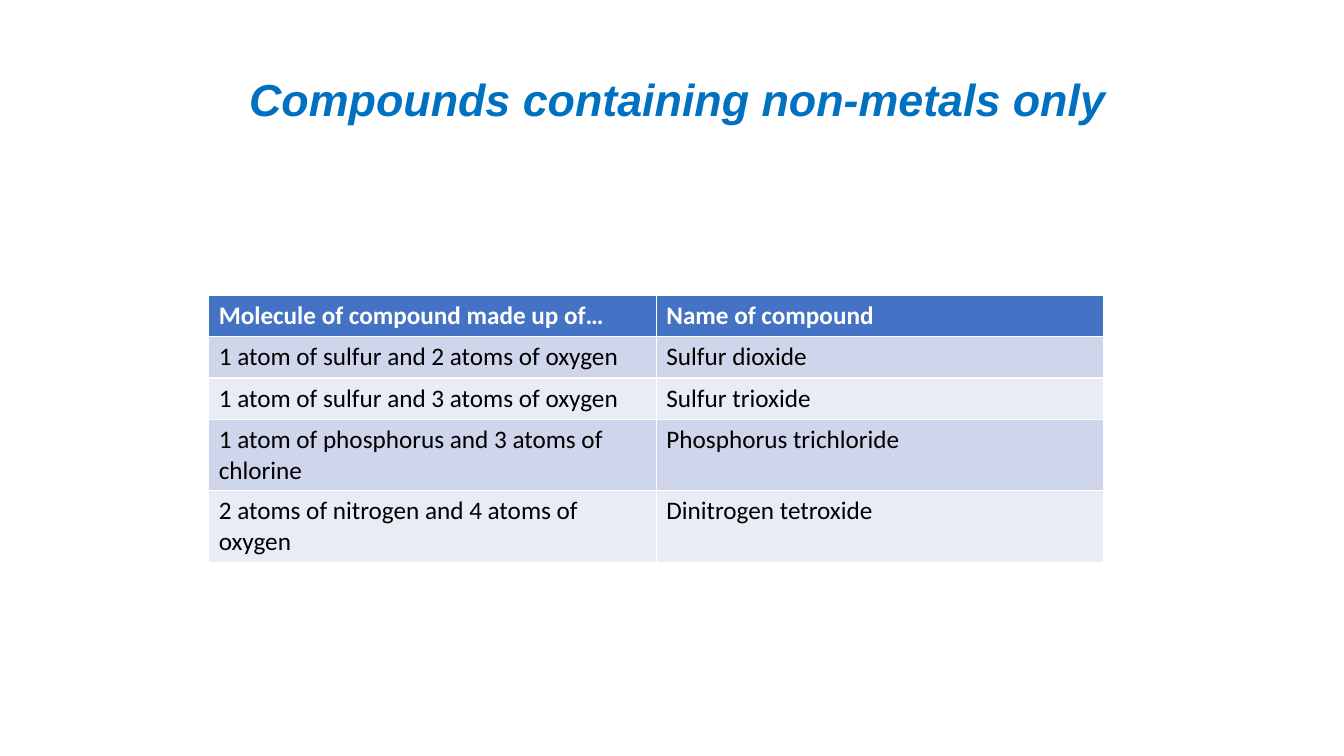
from pptx import Presentation
from pptx.dml.color import RGBColor
from pptx.enum.text import MSO_ANCHOR, PP_ALIGN
from pptx.util import Inches, Pt

MIDDLE = MSO_ANCHOR.MIDDLE
CENTER = PP_ALIGN.CENTER

TITLE = "Compounds containing non-metals only "
COMPOUNDS = [
    ("Molecule of compound made up of…", "Name of compound"),
    ("1 atom of sulfur and 2 atoms of oxygen", "Sulfur dioxide"),
    ("1 atom of sulfur and 3 atoms of oxygen", "Sulfur trioxide"),
    ("1 atom of phosphorus and 3 atoms of chlorine", "Phosphorus trichloride"),
    ("2 atoms of nitrogen and 4 atoms of oxygen", "Dinitrogen tetroxide"),
]

SLIDE_WIDTH, SLIDE_HEIGHT = 13.33, 7.5
LEFT = 2.07
TITLE_TOP, TITLE_WIDTH, TITLE_HEIGHT = 0.23, 9.43, 1.56
TABLE_TOP, COLUMN_WIDTH, ROW_HEIGHT = 2.93, 4.44, 0.41

HEADER_FILL = "4472C4"
BAND_FILLS = ("CFD5EA", "E9EBF5")
TITLE_FORMAT = {"name": "Arial", "size": Pt(32), "bold": True, "italic": True}
HEADER_FORMAT = {"name": "Calibri", "size": Pt(18), "bold": True}
BODY_FORMAT = {"name": "Calibri", "size": Pt(18), "bold": False}


def set_color(color_format, value):
    color_format.rgb = RGBColor.from_string(value)


def write_text(text_frame, text, font_format, color):
    text_frame.text = text
    font = text_frame.paragraphs[0].runs[0].font
    for name, value in font_format.items():
        setattr(font, name, value)
    set_color(font.color, color)


def add_title(slide):
    title = slide.shapes.title
    title.left, title.top = Inches(LEFT), Inches(TITLE_TOP)
    title.width, title.height = Inches(TITLE_WIDTH), Inches(TITLE_HEIGHT)
    text_frame = title.text_frame
    text_frame.word_wrap = True
    text_frame.vertical_anchor = MIDDLE
    write_text(text_frame, TITLE, TITLE_FORMAT, "0070C0")
    paragraph = text_frame.paragraphs[0]
    paragraph.alignment = CENTER
    paragraph.line_spacing = 0.9


def add_compound_table(slide):
    row_count, column_count = len(COMPOUNDS), len(COMPOUNDS[0])
    table = slide.shapes.add_table(
        row_count, column_count, Inches(LEFT), Inches(TABLE_TOP),
        Inches(column_count * COLUMN_WIDTH), Inches(row_count * ROW_HEIGHT),
    ).table
    for row, texts in enumerate(COMPOUNDS):
        is_header = row == 0
        fill = HEADER_FILL if is_header else BAND_FILLS[(row - 1) % 2]
        font_format = HEADER_FORMAT if is_header else BODY_FORMAT
        text_color = "FFFFFF" if is_header else "000000"
        for column, text in enumerate(texts):
            cell = table.cell(row, column)
            cell.fill.solid()
            set_color(cell.fill.fore_color, fill)
            write_text(cell.text_frame, text, font_format, text_color)


def main():
    presentation = Presentation()
    presentation.slide_width = Inches(SLIDE_WIDTH)
    presentation.slide_height = Inches(SLIDE_HEIGHT)
    title_only = presentation.slide_layouts[5]
    slide = presentation.slides.add_slide(title_only)
    add_title(slide)
    add_compound_table(slide)
    presentation.save("out.pptx")


if __name__ == "__main__":
    main()
